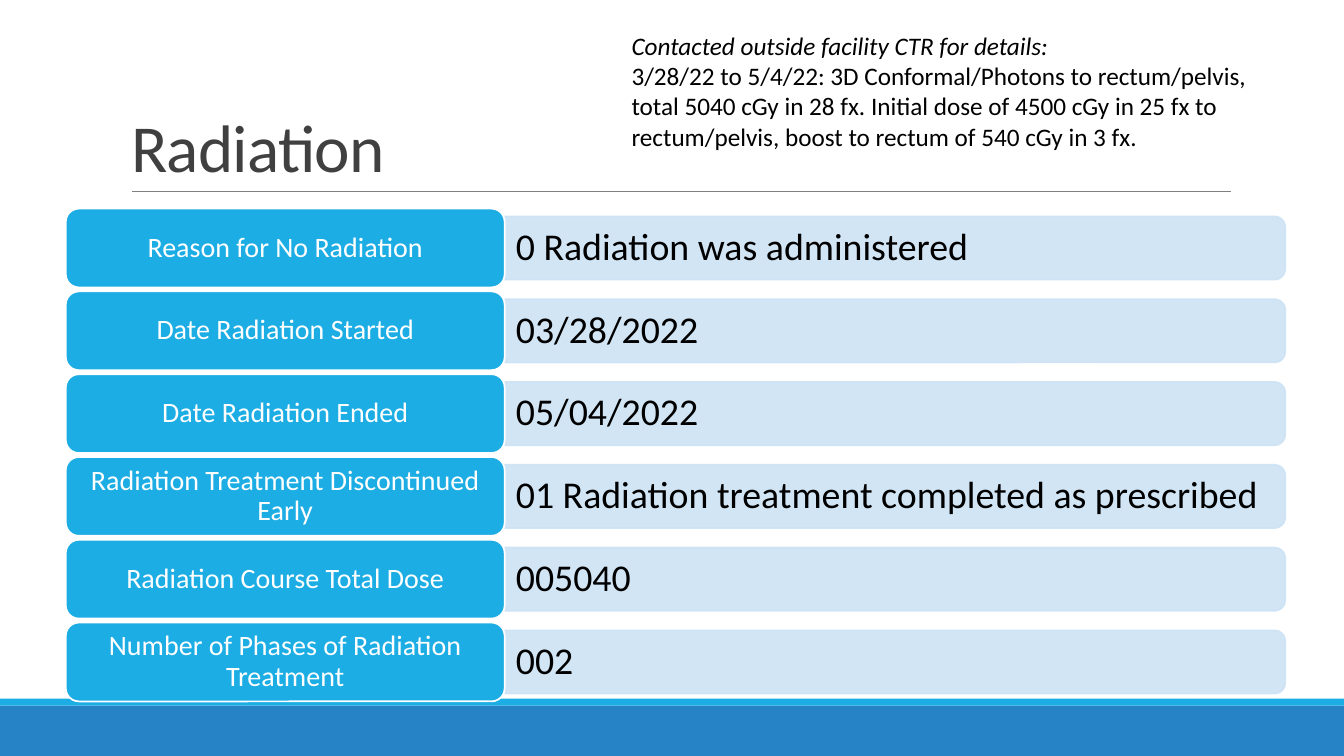
import pptx
import pptx.util
import pptx.dml.color
import pptx.enum.shapes
import pptx.enum.text
import pptx.oxml

Pt = pptx.util.Pt
RGBColor = pptx.dml.color.RGBColor
Shape = pptx.enum.shapes.MSO_SHAPE
Anchor = pptx.enum.text.MSO_ANCHOR
Align = pptx.enum.text.PP_ALIGN

BLUE = RGBColor(0x26, 0x83, 0xC6)
CYAN = RGBColor(0x1C, 0xAD, 0xE4)
PALE = RGBColor(0xCD, 0xE3, 0xF5)
GRAY = RGBColor(0x80, 0x80, 0x80)
DARK = RGBColor(0x40, 0x40, 0x40)
BLACK = RGBColor(0, 0, 0)
WHITE = RGBColor(0xFF, 0xFF, 0xFF)

NS = 'xmlns:a="http://schemas.openxmlformats.org/drawingml/2006/main"'
FONT = "Calibri"
WIDE, HIGH = 960, 540

ROWS = [
    ("Reason for No Radiation", "0 Radiation was administered"),
    ("Date Radiation Started", "03/28/2022"),
    ("Date Radiation Ended", "05/04/2022"),
    ("Radiation Treatment Discontinued Early",
     "01 Radiation treatment completed as prescribed"),
    ("Radiation Course Total Dose", "005040"),
    ("Number of Phases of Radiation Treatment", "002"),
]
NOTE = [
    "Contacted outside facility CTR for details:",
    "3/28/22 to 5/4/22: 3D Conformal/Photons to rectum/pelvis, total 5040 cGy "
    "in 28 fx. Initial dose of 4500 cGy in 25 fx to rectum/pelvis, boost to "
    "rectum of 540 cGy in 3 fx.",
]


def style(para, size, color, align=Align.LEFT, space=1.0):
    para.alignment = align
    para.line_spacing = space
    for run in para.runs:
        run.font.size = Pt(size)
        run.font.name = FONT
        run.font.color.rgb = color


def inset(frame, side, edge):
    frame.word_wrap = True
    frame.margin_left = frame.margin_right = Pt(side)
    frame.margin_top = frame.margin_bottom = Pt(edge)


def block(slide, kind, box, fill, line=None):
    shape = slide.shapes.add_shape(kind, *map(Pt, box))
    shape.shadow.inherit = False
    shape.fill.solid()
    shape.fill.fore_color.rgb = fill
    if line is None:
        shape.line.fill.background()
    else:
        shape.line.color.rgb = line
        shape.line.width = Pt(1.25)
    return shape


def fade(shape):
    """Make fill and line 90 percent opaque."""
    for color in shape.element.spPr.xpath(".//a:srgbClr"):
        color.append(pptx.oxml.parse_xml(f'<a:alpha {NS} val="90000"/>'))


def footer(slide, left, top, width, height):
    strip = 5
    block(slide, Shape.RECTANGLE, (left, top + strip, width, height - strip), BLUE)
    block(slide, Shape.RECTANGLE, (left, top, width, strip), CYAN)


def header(slide, left, top, width, height):
    # Title
    title = slide.shapes.title
    title.left, title.top = Pt(left), Pt(top)
    title.width, title.height = Pt(width), Pt(height)
    frame = title.text_frame
    frame.text = "Radiation"
    frame.auto_size = pptx.enum.text.MSO_AUTO_SIZE.NONE
    frame.vertical_anchor = Anchor.BOTTOM
    inset(frame, 7.2, 3.6)
    para = frame.paragraphs[0]
    style(para, 48, DARK, space=0.85)
    para.runs[0].font._element.set("spc", "-50")

    # Rule under the title
    base = Pt(top + height)
    rule = slide.shapes.add_connector(
        pptx.enum.shapes.MSO_CONNECTOR.STRAIGHT,
        Pt(left + 8), base, Pt(left + width + 0.8), base)
    rule.line.color.rgb = GRAY
    rule.line.width = Pt(0.5)
    rule.element.spPr.append(pptx.oxml.parse_xml(f"<a:effectLst {NS}/>"))


def note(slide, left, top, width, height):
    frame = slide.shapes.add_textbox(*map(Pt, (left, top, width, height))).text_frame
    inset(frame, 7.2, 3.6)
    frame.text = "\n".join(NOTE)
    for para in frame.paragraphs:
        style(para, 18, BLACK)
    frame.paragraphs[0].runs[0].font.italic = True


def row(slide, left, top, width, height, label, value):
    split = 313.5
    wide, high = width - split, 45.1
    mid = top + height / 2
    start = left + split

    # Value bar, turned so that its round corners face right
    center = start + wide / 2
    bar = block(slide, Shape.ROUND_2_SAME_RECTANGLE,
                (center - high / 2, mid - wide / 2, high, wide), PALE, PALE)
    bar.rotation = 90
    fade(bar)

    # Value text
    text = slide.shapes.add_textbox(
        *map(Pt, (start, mid - 20.5, wide - 2, 41))).text_frame
    inset(text, 8, 4)
    text.vertical_anchor = Anchor.MIDDLE
    text.text = value
    style(text.paragraphs[0], 27, BLACK, space=0.9)

    # Label block
    tag = block(slide, Shape.ROUNDED_RECTANGLE, (left, top, split, height), CYAN, WHITE)
    inset(tag.text_frame, 5.4, 2.8)
    tag.text_frame.vertical_anchor = Anchor.MIDDLE
    tag.text_frame.text = label
    style(tag.text_frame.paragraphs[0], 20, WHITE, Align.CENTER, 0.9)


def table(slide, left, top, width, height):
    gap = 2.8
    high = (height - gap * (len(ROWS) - 1)) / len(ROWS)
    for i, (label, value) in enumerate(ROWS):
        row(slide, left, top + i * (high + gap), width, high, label, value)


def main():
    deck = pptx.Presentation()
    deck.slide_width, deck.slide_height = Pt(WIDE), Pt(HIGH)
    slide = deck.slides.add_slide(deck.slide_layouts[5])
    footer(slide, 0, 499, WIDE, 41)
    header(slide, 86.4, 22.6, 792, 114)
    table(slide, 47, 149, 871, 352)
    note(slide, 444, 18, 480, 94.5)
    deck.save("out.pptx")


if __name__ == "__main__":
    main()
